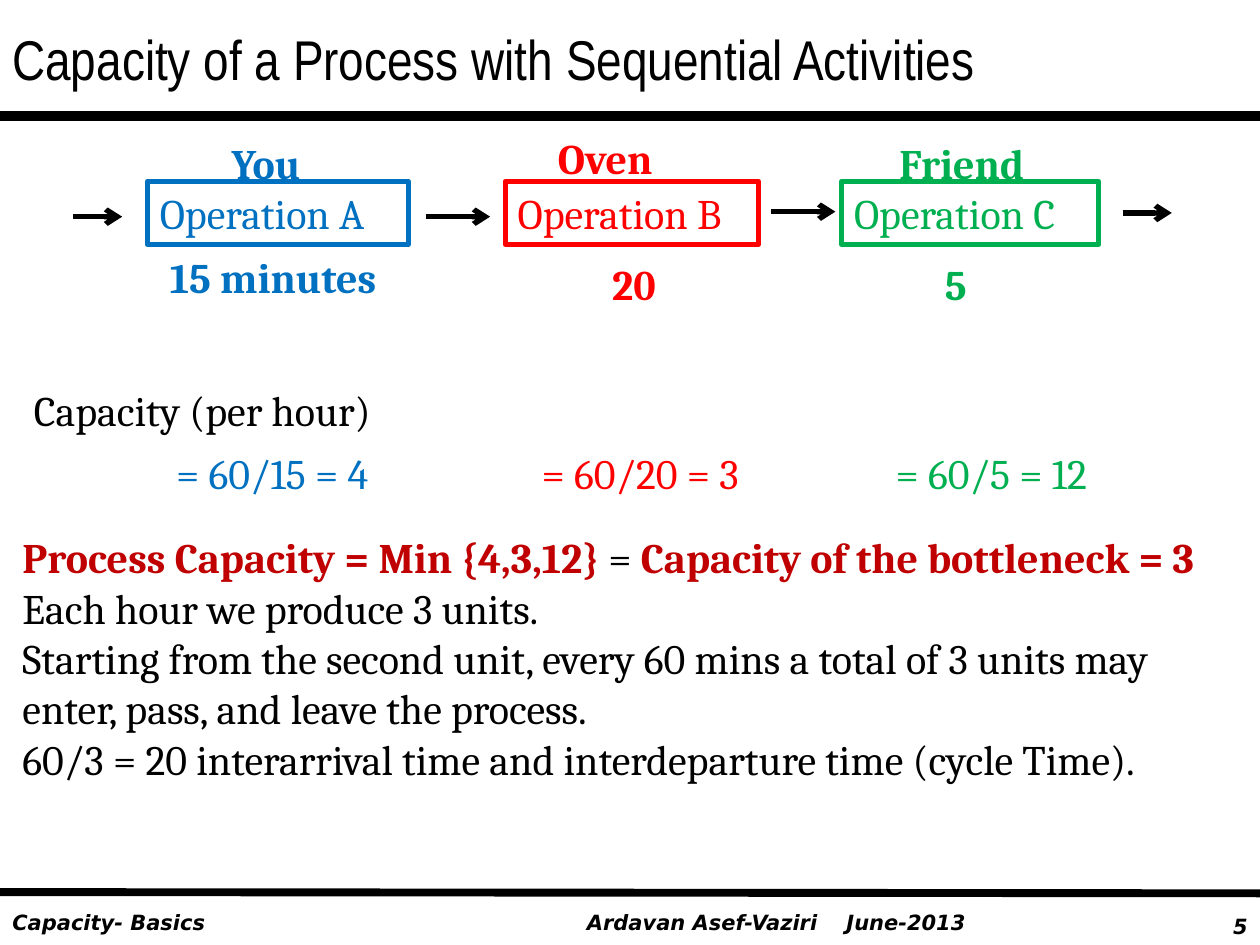
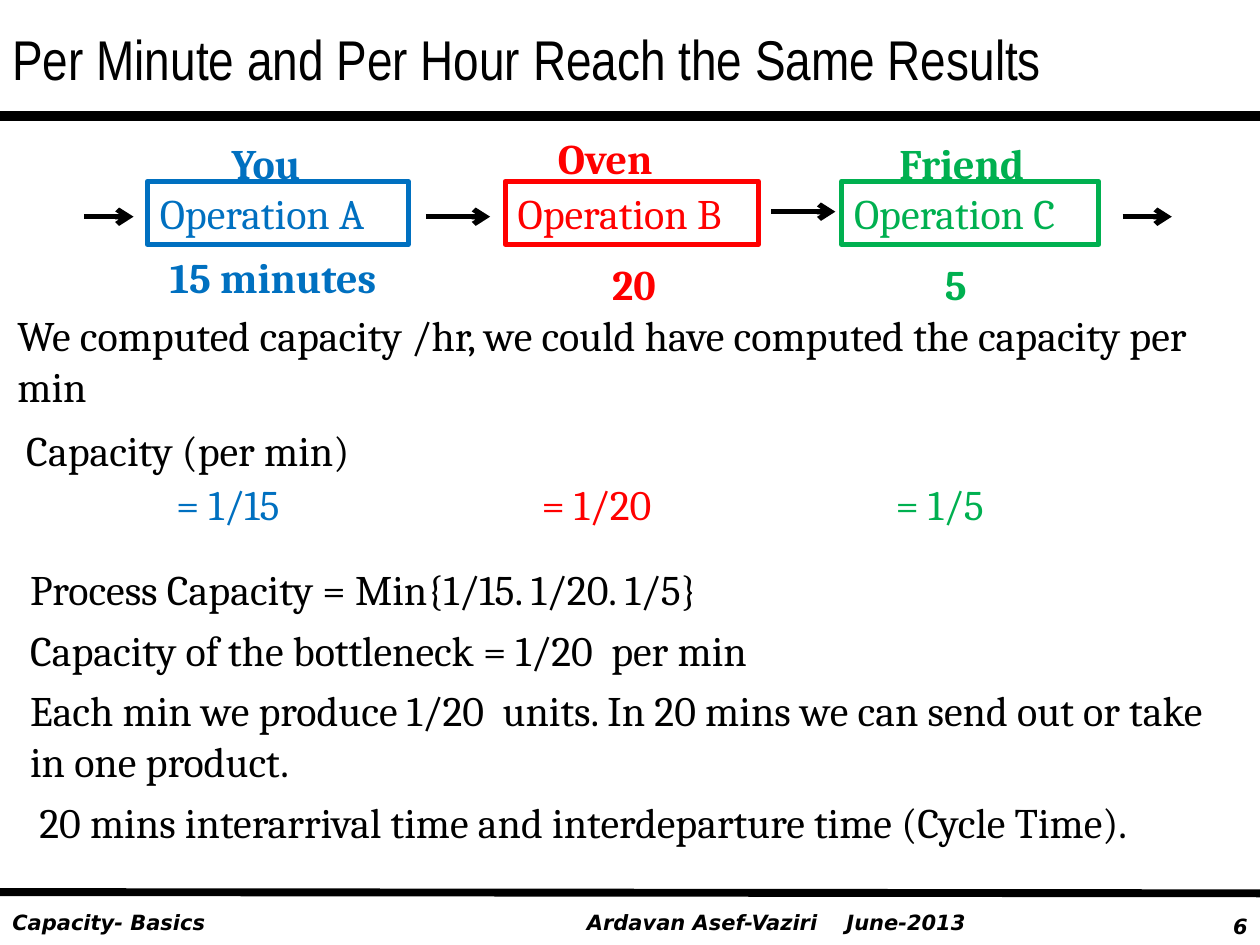
from lxml import etree
from pptx import Presentation
from pptx.dml.color import RGBColor
from pptx.enum.shapes import MSO_CONNECTOR, MSO_SHAPE
from pptx.enum.text import MSO_ANCHOR, PP_ALIGN
from pptx.oxml.ns import qn
from pptx.util import Inches, Pt

STRAIGHT = MSO_CONNECTOR.STRAIGHT
RECTANGLE = MSO_SHAPE.RECTANGLE
TOP, MIDDLE = MSO_ANCHOR.TOP, MSO_ANCHOR.MIDDLE
LEFT, RIGHT = PP_ALIGN.LEFT, PP_ALIGN.RIGHT

BLACK, BLUE, RED, GREEN, DARK_RED = "000000", "0070C0", "FF0000", "00B050", "C00000"
FOOTER = dict(font="DejaVu Sans", size=12, bold=True, italic=True)
TITLE = dict(font="Arial Narrow", size=32, anchor=MIDDLE)

OPERATIONS = [
    ("Operation A", BLUE, (1.17, 2.07), ("You", 1.74, 1.04, 0.82), ("15 minutes", 1.25, 1.95, 2)),
    ("Operation B", RED, (4.01, 2.01), ("Oven", 4.33, 1, 1.04), ("20", 4.76, 2, 0.57)),
    ("Operation C", GREEN, (6.68, 2.04), ("Friend", 7.04, 1.04, 1.21), ("5", 7.4, 2, 0.4)),
]
RATE_LEFTS = (1.3, 4.2, 7.01)


def rgb(value):
    return RGBColor.from_string(value)


def write(sp, paragraphs, font="Cambria", size=24, color=BLACK, bold=False, italic=False,
          align=LEFT, anchor=TOP, before=0, tab=None):
    tf = sp.text_frame
    tf.word_wrap = True
    tf.vertical_anchor = anchor
    if isinstance(paragraphs, str):
        paragraphs = [paragraphs]
    for i, runs in enumerate(paragraphs):
        p = tf.paragraphs[0] if i == 0 else tf.add_paragraph()
        p.alignment = align
        p.space_before = Pt(before)
        if tab:
            stops = etree.SubElement(p._p.get_or_add_pPr(), qn("a:tabLst"))
            etree.SubElement(stops, qn("a:tab"), pos=str(Inches(tab)), algn="l")
        if isinstance(runs, str):
            runs = [(runs, color, bold)]
        for text, run_color, run_bold in runs:
            r = p.add_run()
            r.text = text
            r.font.name = font
            r.font.size = Pt(size)
            r.font.bold = run_bold
            r.font.italic = italic
            r.font.color.rgb = rgb(run_color)


class Deck:
    def __init__(self):
        self.prs = Presentation()
        self.prs.slide_width, self.prs.slide_height = Inches(10), Inches(7.5)
        self.s = None

    def slide(self, title, number):
        self.s = self.prs.slides.add_slide(self.prs.slide_layouts[6])
        self.text(str(number), 9.25, 7.2, 0.75, 0.3, align=RIGHT, **FOOTER)
        self.text("Ardavan Asef-Vaziri\tJune-2013", 4.56, 7.17, 3.35, 0.3, tab=2.06, **FOOTER)
        self.text("Capacity- Basics", 0, 7.17, 4.67, 0.3, **FOOTER)
        self.line(0, 0.92, 10, 0.92, 6)
        self.line(0, 7.08, 10, 7.09, 4.5)
        self.text(title, 0, 0, 10, 0.92, **TITLE)

    def text(self, paragraphs, x, y, w, h=0.5, **style):
        sp = self.s.shapes.add_textbox(Inches(x), Inches(y), Inches(w), Inches(h))
        write(sp, paragraphs, **style)

    def box(self, label, x, y, w, h, color):
        sp = self.s.shapes.add_shape(RECTANGLE, Inches(x), Inches(y), Inches(w), Inches(h))
        sp.shadow.inherit = False
        sp.fill.background()
        sp.line.color.rgb = rgb(color)
        sp.line.width = Pt(3)
        write(sp, label, color=color)

    def line(self, x1, y1, x2, y2, width):
        c = self.s.shapes.add_connector(STRAIGHT, Inches(x1), Inches(y1), Inches(x2), Inches(y2))
        c.line.color.rgb = rgb(BLACK)
        c.line.width = Pt(width)
        etree.SubElement(c._element.spPr, qn("a:effectLst"))
        return c

    def arrow(self, x1, x2, y):
        c = self.line(x1, y, x2, y, 3)
        etree.SubElement(c.line._get_or_add_ln(), qn("a:tailEnd"), type="arrow")

    def process(self, entry_left, exit_y):
        for label, color, (left, width), worker, minutes in OPERATIONS:
            for caption, x, y, w in (worker, minutes):
                self.text(caption, x, y, w, color=color, bold=True)
            self.box(label, left, 1.44, width, 0.5, color)
        self.arrow(entry_left, entry_left + 0.39, 1.72)
        self.arrow(3.38, 3.89, 1.72)
        self.arrow(6.12, 6.63, 1.68)
        self.arrow(8.91, 9.3, exit_y)

    def rates(self, formulas, y):
        for formula, x, operation in zip(formulas, RATE_LEFTS, OPERATIONS):
            self.text(formula, x, y, 1.91, color=operation[1])


def main():
    deck = Deck()

    deck.slide("Capacity of a Process with Sequential Activities", 5)
    deck.text("Capacity (per hour)", 0.17, 3, 3.26)
    deck.rates(("= 60/15 = 4", "= 60/20 = 3", "= 60/5 = 12"), 3.5)
    deck.text([
        [("Process Capacity = Min {4,3,12} ", DARK_RED, True), ("= ", BLACK, False),
         ("Capacity of the bottleneck = 3", DARK_RED, True)],
        "Each hour we produce 3 units.",
        "Starting from the second unit, every 60 mins a total of 3 units may enter, pass, "
        "and leave the process.",
        "60/3 = 20 interarrival time and interdeparture time (cycle Time).",
    ], 0.08, 4.17, 9.92, 2.12)
    deck.process(entry_left=0.58, exit_y=1.69)

    deck.slide("Per Minute and Per Hour Reach the Same Results", 6)
    deck.text("We computed capacity /hr, we could have computed the capacity per min",
              0.04, 2.41, 9.66, 1.31)
    deck.text("Capacity (per min)", 0.11, 3.32, 3.15)
    deck.rates(("= 1/15", "= 1/20", "= 1/5"), 3.75)
    deck.text([
        "Process Capacity = Min{1/15. 1/20. 1/5}",
        "Capacity of the bottleneck = 1/20  per min",
        "Each min we produce 1/20  units. In 20 mins we can send out or take in one product.",
        " 20 mins interarrival time and interdeparture time (Cycle Time).",
    ], 0.14, 4.42, 9.75, 2.37, before=6)
    deck.process(entry_left=0.67, exit_y=1.72)

    deck.prs.save("out.pptx")


if __name__ == "__main__":
    main()
